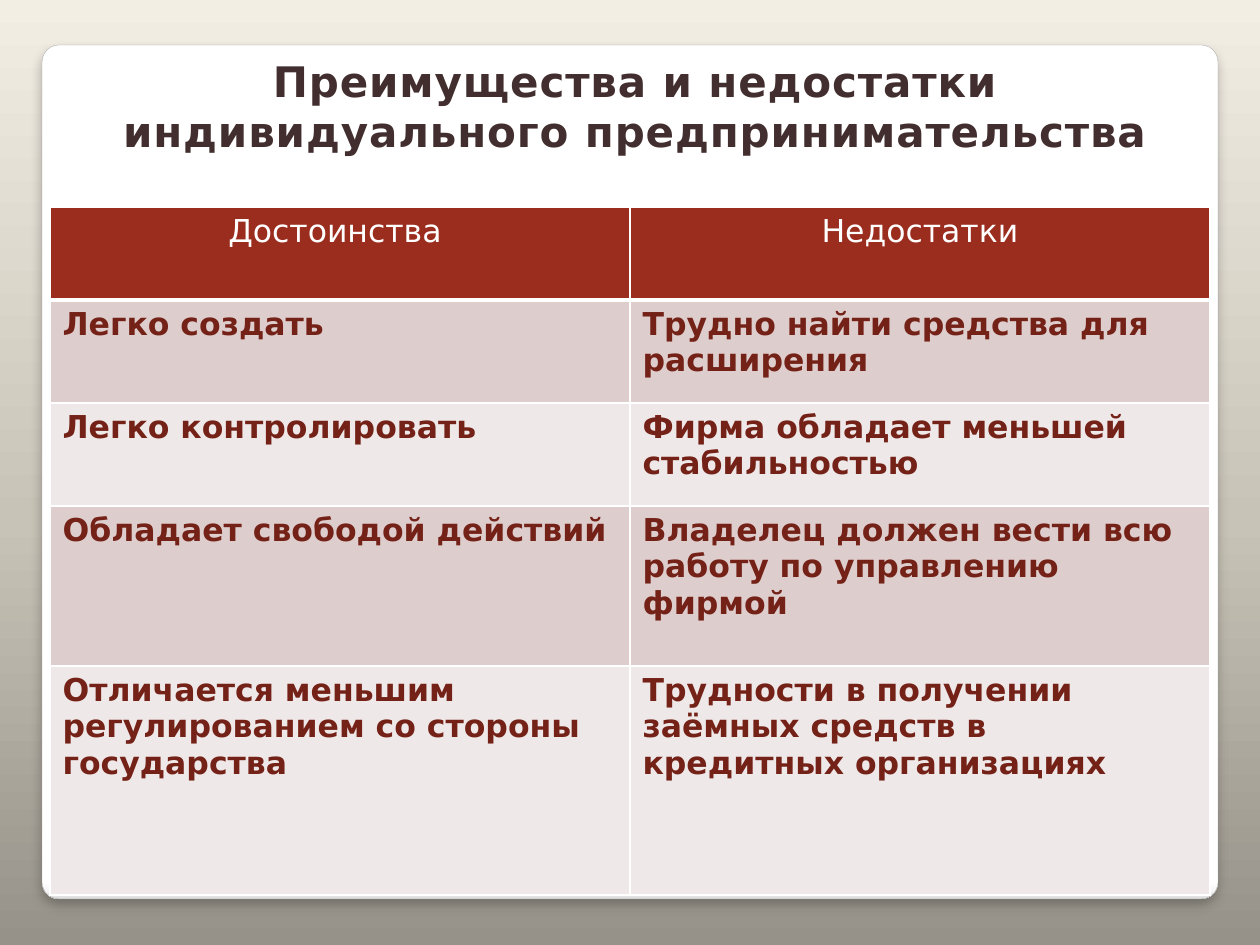
"""Build a slide on the pros and cons of sole proprietorship."""
from lxml import etree
from pptx import Presentation, util as u
from pptx.dml.color import RGBColor
from pptx.enum import shapes, text
from pptx.oxml import parse_xml
from pptx.oxml.ns import nsdecls, qn

NS = nsdecls("a")
WHITE = "FFFFFF"


def px(*vals):
    return [u.Emu(round(v * 914400 / 126)) for v in vals]


def write(frame, *lines, size=18, color=WHITE, bold=False, align=None, gap=0):
    for i, line in enumerate(lines):
        para = frame.add_paragraph() if i else frame.paragraphs[0]
        para.alignment = align
        run = para.add_run()
        run.text = line
        font = run.font
        font.name, font.size, font.bold = "DejaVu Sans", u.Pt(size), bold
        font.color.rgb = RGBColor.from_string(color)
        if gap:
            run._r.get_or_add_rPr().set("spc", str(gap))


deck = Presentation()
deck.slide_width, deck.slide_height = px(1260, 945)
slide = deck.slides.add_slide(deck.slide_layouts[5])
title = slide.shapes.title
tree = slide.shapes._spTree

panel = slide.shapes.add_shape(
    shapes.MSO_SHAPE.ROUNDED_RECTANGLE, *px(42, 45, 1176, 854))
tree.remove(panel._element)
tree.insert(2, panel._element)
panel.adjustments[0] = 0.02
panel.line.color.rgb = RGBColor.from_string("A4A4A4")
panel.line.width = u.Pt(0.16)

back = slide.background.fill
fills = [
    (back, slide.element, 270, [(0, "969289"), (45, "C8C3B7"), (100, "F3EEE4")]),
    (panel.fill, panel._element, 90,
     [(0, WHITE), (98, WHITE), (99, "F7F7F7"), (100, "DADADA")]),
]
for fill, root, angle, stops in fills:
    fill.gradient()
    # the first gradFill found belongs to the background or the panel itself
    grad = next(root.iter(qn("a:gradFill")))
    for part in list(grad):
        grad.remove(part)
    marks = "".join(f'<a:gs pos="{pos * 1000}"><a:srgbClr val="{tint}"/></a:gs>'
                    for pos, tint in stops)
    grad.append(parse_xml(f"<a:gsLst {NS}>{marks}</a:gsLst>"))
    etree.SubElement(grad, qn("a:lin"), ang=str(angle * 60000), scaled="0")

panel.shadow.inherit = False
glow = panel._element.spPr.find(qn("a:effectLst"))
glow.append(parse_xml(
    f'<a:outerShdw {NS} blurRad="76200" dist="50800" dir="5400000" rotWithShape="0">'
    '<a:srgbClr val="000000"><a:alpha val="25000"/></a:srgbClr></a:outerShdw>'))

title.left, title.top, title.width, title.height = px(49, 49, 1172, 115)
frame = title.text_frame
frame.word_wrap = True
frame.auto_size = text.MSO_AUTO_SIZE.NONE
frame.vertical_anchor = text.MSO_ANCHOR.TOP
write(frame, "Преимущества и недостатки", " индивидуального предпринимательства ",
      size=24, color="422E2E", bold=True, align=text.PP_ALIGN.CENTER, gap=50)

rows = [
    (93, "Достоинства ", "Недостатки"),
    (103, "Легко создать", "Трудно найти средства для расширения"),
    (103, "Легко контролировать", "Фирма обладает меньшей стабильностью"),
    (160, "Обладает свободой действий",
     "Владелец должен вести всю работу по управлению фирмой"),
    (229, "Отличается меньшим регулированием со стороны государства",
     "Трудности в получении заёмных средств в кредитных организациях"),
]
high = sum(row[0] for row in rows)
table = slide.shapes.add_table(len(rows), 2, *px(50, 207, 1160, high)).table
for r, (tall, *words) in enumerate(rows):
    table.rows[r].height = px(tall)[0]
    head = r == 0
    tint = "9B2D1F" if head else ("EFE8E8", "DECDCD")[r % 2]
    for c, word in enumerate(words):
        cell = table.cell(r, c)
        props = cell._tc.get_or_add_tcPr()
        for side in "LRTB":
            wide = 38100 if head and side == "B" else 12700
            props.append(parse_xml(
                f'<a:ln{side} {NS} w="{wide}"><a:solidFill>'
                f'<a:srgbClr val="{WHITE}"/></a:solidFill></a:ln{side}>'))
        cell.fill.solid()
        cell.fill.fore_color.rgb = RGBColor.from_string(tint)
        write(cell.text_frame, word, color=WHITE if head else "742217",
              bold=not head, align=text.PP_ALIGN.CENTER if head else None)

deck.save("out.pptx")
